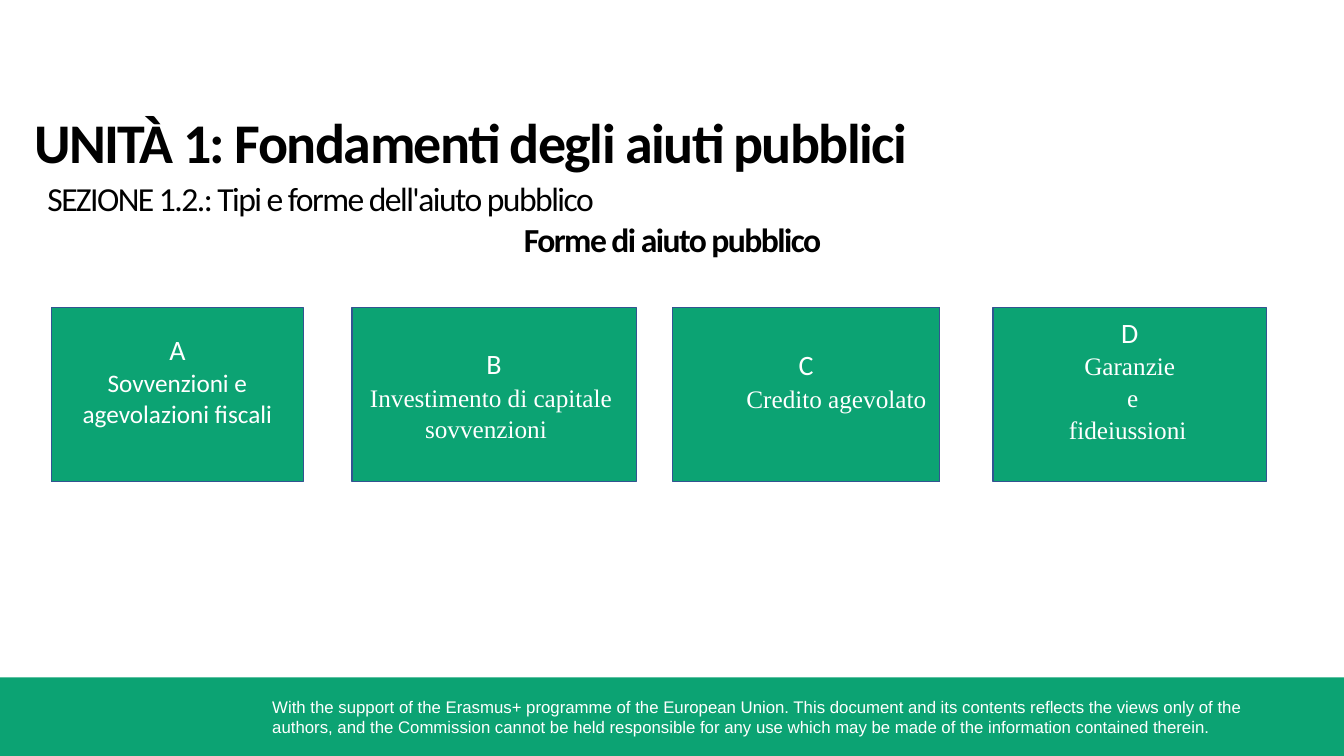
import pptx
import pptx.util
import pptx.dml.color
import pptx.enum.shapes
import pptx.enum.text

Inches = pptx.util.Inches
Pt = pptx.util.Pt
ALIGN = pptx.enum.text.PP_ALIGN
SHAPE = pptx.enum.shapes.MSO_SHAPE

COLORS = {"green": "0CA373", "border": "325491", "white": "FFFFFF", "black": "000000"}

TITLE = {"size": Pt(40), "name": "Calibri", "bold": True}
SECTION = {"size": Pt(24), "name": "Calibri", "bold": False}
HEADING = {"size": Pt(24), "name": "Calibri", "bold": True}
FOOTER = {"size": Pt(12), "name": "Arial"}
LETTER = {"size": Pt(20), "name": "Calibri"}

CARD_TOP, CARD_HEIGHT = 3.05, 1.73
CARDS = [
    {"left": 0.51, "width": 2.5, "inset": 0.25, "letter": "A", "font": "Calibri",
     "lines": [("Sovvenzioni e agevolazioni fiscali", {})]},
    {"left": 3.49, "width": 2.82, "inset": 0.39, "letter": "B", "font": "Times New Roman",
     "lines": [("Investimento di capitale", {"marR": 0.06}), ("sovvenzioni", {"marR": 0.16})]},
    {"left": 6.67, "width": 2.65, "inset": 0.4, "letter": "C", "font": "Times New Roman",
     "lines": [("Credito agevolato", {"marL": 0.6})]},
    {"left": 9.85, "width": 2.71, "inset": 0.08, "letter": "D", "font": "Times New Roman",
     "lines": [("Garanzie", {}), ("e", {"marL": 0.06}), ("fideiussioni", {"marR": 0.04})]},
]


def rgb(key):
    return pptx.dml.color.RGBColor.from_string(COLORS[key])


def set_frame(tf, left=0, top=0, right=0, bottom=0):
    values = {
        "word_wrap": True,
        "auto_size": pptx.enum.text.MSO_AUTO_SIZE.NONE,
        "vertical_anchor": pptx.enum.text.MSO_ANCHOR.TOP,
        "margin_left": Inches(left),
        "margin_top": Inches(top),
        "margin_right": Inches(right),
        "margin_bottom": Inches(bottom),
    }
    for name, value in values.items():
        setattr(tf, name, value)


def write(p, text, font, color, align=ALIGN.LEFT, spacing=0, margins=None):
    p.alignment = align
    pPr = p._p.get_or_add_pPr()
    for name, value in (margins or {}).items():
        pPr.set(name, str(Inches(value)))
    r = p.add_run()
    r.text = text
    for name, value in font.items():
        setattr(r.font, name, value)
    r.font.color.rgb = rgb(color)
    r._r.get_or_add_rPr().set("spc", str(spacing))


def add_title(s, box, text):
    sp = s.shapes.title
    for name, value in zip(("left", "top", "width", "height"), box):
        setattr(sp, name, Inches(value))
    set_frame(sp.text_frame)
    write(sp.text_frame.paragraphs[0], text, TITLE, "black", spacing=-110)


def add_text(s, box, text, font, color, align=ALIGN.LEFT, spacing=0):
    sp = s.shapes.add_textbox(*map(Inches, box))
    set_frame(sp.text_frame)
    write(sp.text_frame.paragraphs[0], text, font, color, align, spacing)


def add_block(s, kind, box):
    sp = s.shapes.add_shape(kind, *map(Inches, box))
    sp.shadow.inherit = False
    sp.fill.solid()
    sp.fill.fore_color.rgb = rgb("green")
    sp.line.fill.background()
    return sp


def add_card(s, card):
    sp = add_block(s, SHAPE.FLOWCHART_PROCESS,
                   (card["left"], CARD_TOP, card["width"], CARD_HEIGHT))
    sp.line.color.rgb = rgb("border")
    sp.line.width = Pt(1)
    tf = sp.text_frame
    set_frame(tf, left=0.1, top=card["inset"], right=0.1)
    write(tf.paragraphs[0], card["letter"], LETTER, "white", ALIGN.CENTER, -110)
    for text, margins in card["lines"]:
        p = tf.add_paragraph()
        p.space_before = Pt(1.1)
        font = {"size": Pt(18), "name": card["font"]}
        write(p, text, font, "white", ALIGN.CENTER, margins=margins)


def main():
    prs = pptx.Presentation()
    prs.slide_width = Inches(13.33)
    prs.slide_height = Inches(7.5)
    s = prs.slides.add_slide(prs.slide_layouts[5])

    add_block(s, SHAPE.RECTANGLE, (0, 6.72, 13.33, 0.78))
    add_text(s, (2.7, 6.91, 10.22, 0.4),
             "With the support of the Erasmus+ programme of the European Union. "
             "This document and its contents reflects the views only of the authors, "
             "and the Commission cannot be held responsible for any use which may be "
             "made of the information contained therein.", FOOTER, "white")

    add_title(s, (0.34, 1.07, 12.78, 0.68), "UNITÀ 1: Fondamenti degli aiuti pubblici")
    add_text(s, (0.47, 1.76, 12.65, 0.41),
             "SEZIONE 1.2.: Tipi e forme dell'aiuto pubblico", SECTION, "black", spacing=-110)
    add_text(s, (0.22, 2.17, 12.9, 0.41),
             "Forme di aiuto pubblico", HEADING, "black", ALIGN.CENTER, -110)

    for card in CARDS:
        add_card(s, card)

    prs.save("out.pptx")


if __name__ == "__main__":
    main()
